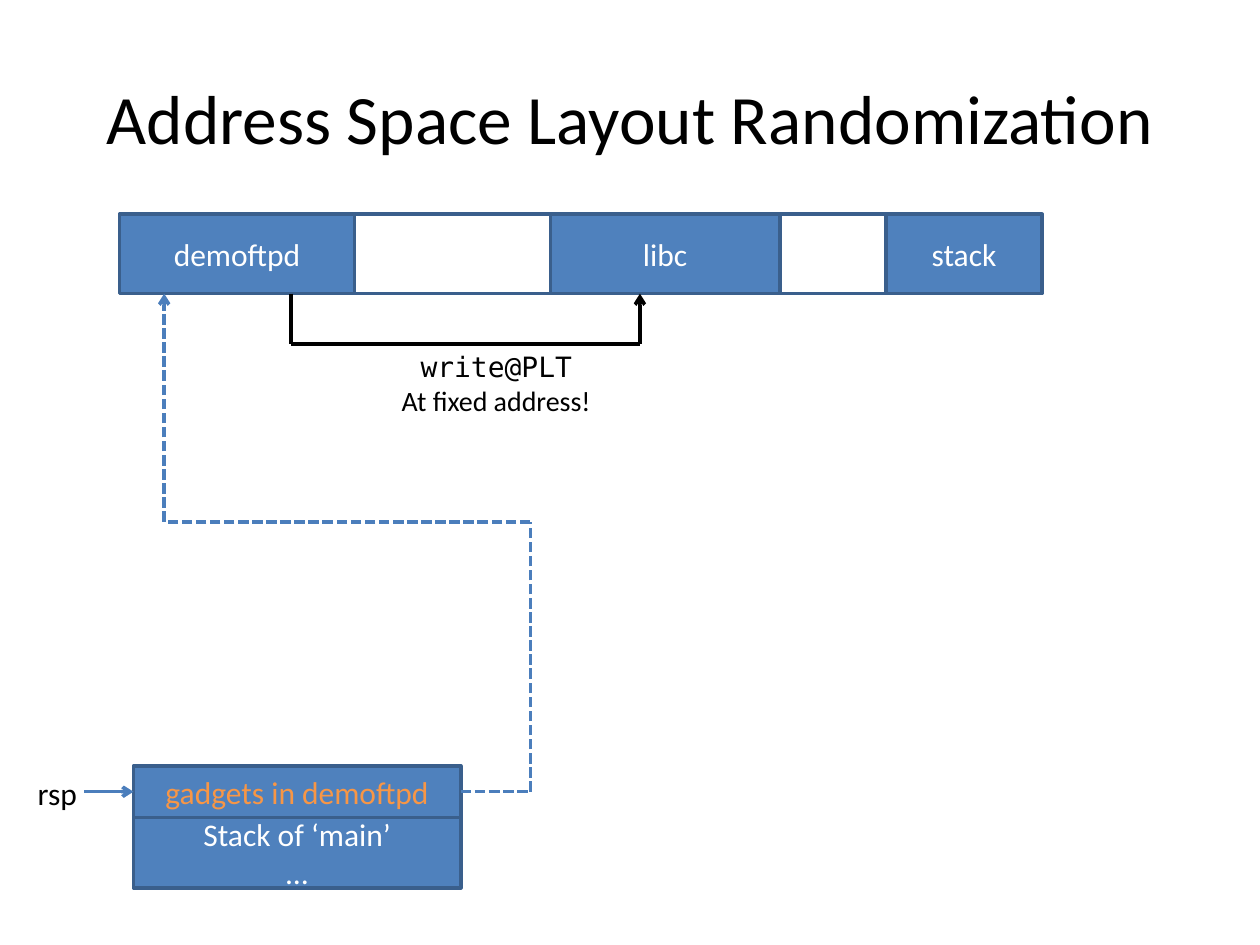
from itertools import pairwise

from lxml.etree import SubElement
from pptx import Presentation
from pptx.dml.color import RGBColor
from pptx.enum.dml import MSO_LINE
from pptx.enum.shapes import MSO_CONNECTOR, MSO_SHAPE
from pptx.enum.text import MSO_ANCHOR, PP_ALIGN
from pptx.oxml.ns import qn
from pptx.util import Cm, Pt

COLORS = {"block": "4F81BD", "border": "3A5F8C", "arrow": "4B7EBC",
          "black": "000000", "white": "FFFFFF", "gadget": "F79646"}
SANS, MONO = "Calibri", "DejaVu Sans Mono"

# Content: lengths in centimetres
TITLE = "Address Space Layout Randomization"
MEMORY_LEFT, MEMORY_TOP, MEMORY_HEIGHT = 2.41, 4.32, 1.6
MEMORY = [("demoftpd", 4.74), ("", 3.95), ("libc", 4.62), ("", 2.14), ("stack", 3.15)]
STACK_LEFT, STACK_TOP, STACK_WIDTH = 2.69, 15.44, 6.6
STACK = [("gadgets in demoftpd", 1.04, "gadget"), ("Stack of ‘main’\n…", 1.42, "white")]

MEMORY_BOTTOM = MEMORY_TOP + MEMORY_HEIGHT
STACK_RIGHT = STACK_LEFT + STACK_WIDTH
RSP_Y = STACK_TOP + STACK[0][1] / 2
TURN_X, TURN_Y, GADGET_X = 10.69, 10.52, 3.31
CALL_X, CALL_Y, LIBC_X = 5.87, 6.93, 12.9

# Each route: corner points, colour, dashed; the last piece has the arrowhead
ROUTES = [
    ([(1.7, RSP_Y), (STACK_LEFT, RSP_Y)], "arrow", False),
    ([(STACK_RIGHT, RSP_Y), (TURN_X, RSP_Y), (TURN_X, TURN_Y),
      (GADGET_X, TURN_Y), (GADGET_X, MEMORY_BOTTOM)], "arrow", True),
    ([(CALL_X, MEMORY_BOTTOM), (CALL_X, CALL_Y),
      (LIBC_X, CALL_Y), (LIBC_X, MEMORY_BOTTOM)], "black", False),
]
# Each label: box, alignment, size, lines with their fonts
LABELS = [
    ((0.51, 15.47, 1.45, 1.02), PP_ALIGN.LEFT, 18, [("rsp", SANS)]),
    ((7.82, CALL_Y, 4.37, 1.63), PP_ALIGN.CENTER, 16,
     [("write@PLT", MONO), ("At fixed address!", SANS)]),
]


def rgb(name):
    return RGBColor.from_string(COLORS[name])


def format_paragraph(paragraph, size, color, font=SANS, align=PP_ALIGN.CENTER):
    paragraph.alignment = align
    for run in paragraph.runs:
        run.font.size = Pt(size)
        run.font.name = font
        run.font.color.rgb = rgb(color)


def add_block(slide, left, top, width, height, text, color="white"):
    shape = slide.shapes.add_shape(
        MSO_SHAPE.RECTANGLE, Cm(left), Cm(top), Cm(width), Cm(height))
    shape.shadow.inherit = False
    shape.line.color.rgb = rgb("border")
    shape.line.width = Pt(2)
    if not text:
        shape.fill.background()
        return
    shape.fill.solid()
    shape.fill.fore_color.rgb = rgb("block")
    shape.text_frame.text = text
    shape.text_frame.vertical_anchor = MSO_ANCHOR.MIDDLE
    for paragraph in shape.text_frame.paragraphs:
        format_paragraph(paragraph, 18, color)


def add_route(slide, points, color, dashed):
    for start, end in pairwise(points):
        connector = slide.shapes.add_connector(
            MSO_CONNECTOR.STRAIGHT, *(Cm(value) for value in start + end))
        connector.line.color.rgb = rgb(color)
        connector.line.width = Pt(2)
        if dashed:
            connector.line.dash_style = MSO_LINE.SQUARE_DOT
        properties = connector.element.spPr
        SubElement(properties, qn("a:effectLst"))
    # Arrowhead on the last piece
    SubElement(properties.find(qn("a:ln")), qn("a:tailEnd"), type="arrow")


def add_label(slide, box, align, size, lines):
    text_frame = slide.shapes.add_textbox(*(Cm(value) for value in box)).text_frame
    text_frame.word_wrap = False
    text_frame.text = "\n".join(text for text, font in lines)
    for paragraph, (text, font) in zip(text_frame.paragraphs, lines):
        format_paragraph(paragraph, size, "black", font, align)


def main():
    presentation = Presentation()
    presentation.slide_width, presentation.slide_height = Cm(25.4), Cm(19.05)
    slide = presentation.slides.add_slide(presentation.slide_layouts[5])

    # Title
    title = slide.shapes.title
    title.left, title.top, title.width, title.height = Cm(1.27), Cm(0.76), Cm(22.86), Cm(3.18)
    title.text_frame.text = TITLE
    title.text_frame.vertical_anchor = MSO_ANCHOR.MIDDLE
    format_paragraph(title.text_frame.paragraphs[0], 39.6, "black")

    # Address space
    left = MEMORY_LEFT
    for text, width in MEMORY:
        add_block(slide, left, MEMORY_TOP, width, MEMORY_HEIGHT, text)
        left += width

    # Stack contents
    top = STACK_TOP
    for text, height, color in STACK:
        add_block(slide, STACK_LEFT, top, STACK_WIDTH, height, text, color)
        top += height

    # Pointers and labels
    for route in ROUTES:
        add_route(slide, *route)
    for label in LABELS:
        add_label(slide, *label)

    presentation.save("out.pptx")


if __name__ == "__main__":
    main()
